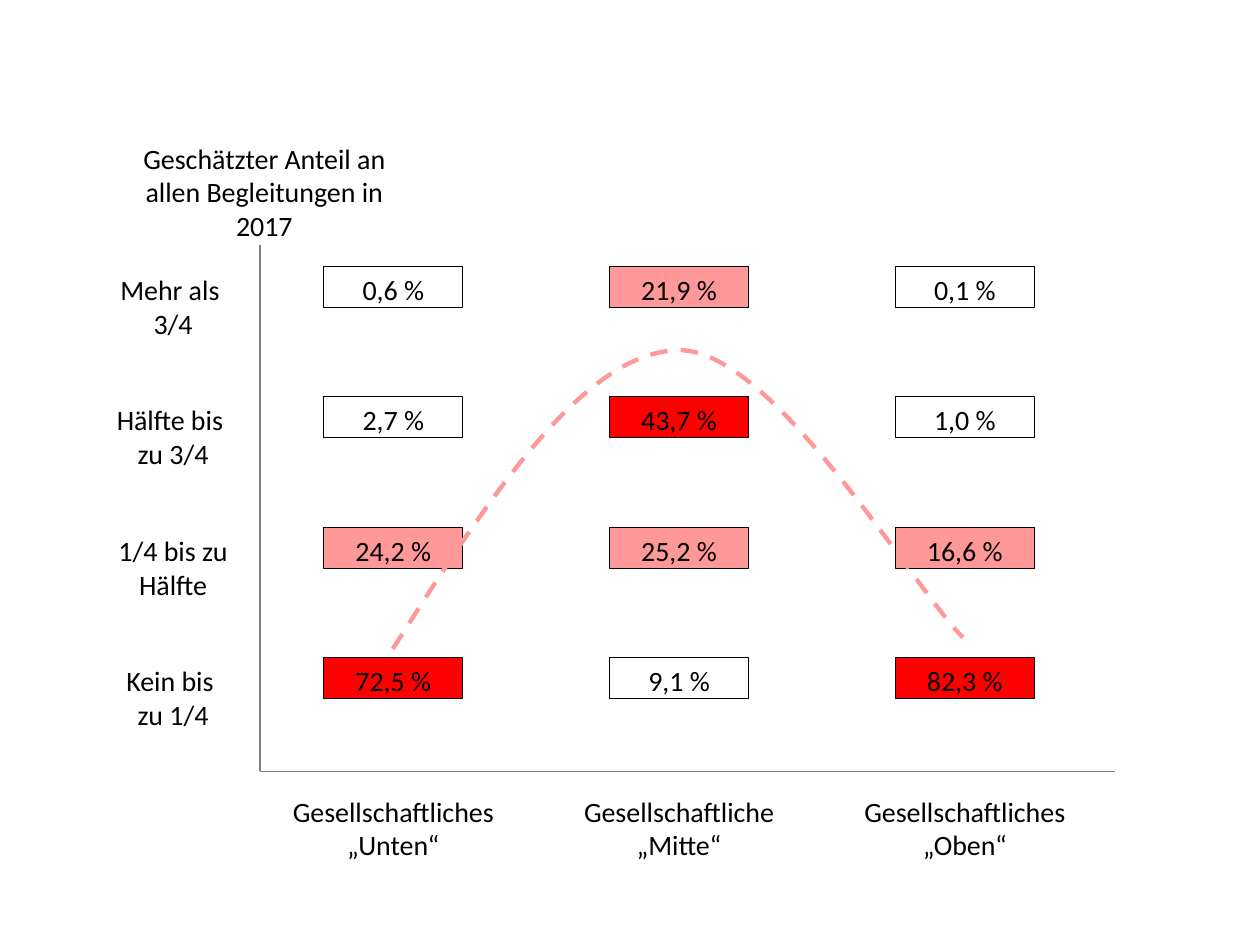
import pptx
import pptx.dml.color
import pptx.enum.dml
import pptx.enum.shapes
import pptx.enum.text
import pptx.oxml.ns
import pptx.util
import lxml.etree

Cm = pptx.util.Cm
Pt = pptx.util.Pt


def color(hex_string):
    return pptx.dml.color.RGBColor.from_string(hex_string)


def write_text(shape, lines):
    """Write centred lines, separated by line breaks, from the top of a shape."""
    frame = shape.text_frame
    frame.word_wrap = True
    frame.vertical_anchor = pptx.enum.text.MSO_ANCHOR.TOP
    paragraph = frame.paragraphs[0]
    paragraph.alignment = pptx.enum.text.PP_ALIGN.CENTER
    for index, line in enumerate(lines):
        if index:
            paragraph.add_line_break()
        run = paragraph.add_run()
        run.text = line
        run.font.name = "Calibri"
        run.font.size = Pt(16)
        run.font.color.rgb = color("000000")


presentation = pptx.Presentation()
presentation.slide_width = Cm(25.4)
presentation.slide_height = Cm(19.05)
slide = presentation.slides.add_slide(presentation.slide_layouts[6])
shapes = slide.shapes

# Grid of value boxes
box_left, box_top = 6.53, 5.37
column_step, row_step = 5.76, 2.63
box_width, box_height = 2.8, 0.83
label_height = 1.42

# Axes
origin_x, origin_y = 5.24, 15.55
for end_x, end_y in [(22.48, origin_y), (origin_x, 4.93)]:
    axis = shapes.add_connector(
        pptx.enum.shapes.MSO_CONNECTOR.STRAIGHT,
        Cm(origin_x), Cm(origin_y), Cm(end_x), Cm(end_y))
    axis.line.color.rgb = color("808080")
    axis.line.width = Pt(0.75)
    lxml.etree.SubElement(
        axis._element.spPr, pptx.oxml.ns.qn("a:effectLst"))

# Axis title
title = shapes.add_textbox(Cm(2.08), Cm(2.72), Cm(6.5), Cm(label_height))
write_text(title, ["Geschätzter Anteil an allen Begleitungen in 2017"])

# Column labels, centred under the boxes
label_width = 4.65
columns = ["Gesellschaftliches „Unten“", "Gesellschaftliche „Mitte“",
           "Gesellschaftliches „Oben“"]
for column, text in enumerate(columns):
    left = box_left + column * column_step - (label_width - box_width) / 2
    label = shapes.add_textbox(
        Cm(left), Cm(15.89), Cm(label_width), Cm(label_height))
    write_text(label, [text])

# Row labels and value boxes, each value with its fill
strong, medium, empty = "FF0000", "FF9999", None
rows = [
    (["Mehr als ", "3/4"],
     [("0,6 %", empty), ("21,9 %", medium), ("0,1 %", empty)]),
    (["Hälfte bis ", "zu 3/4"],
     [("2,7 %", empty), ("43,7 %", strong), ("1,0 %", empty)]),
    (["1/4 bis zu Hälfte"],
     [("24,2 %", medium), ("25,2 %", medium), ("16,6 %", medium)]),
    (["Kein bis ", "zu 1/4"],
     [("72,5 %", strong), ("9,1 %", empty), ("82,3 %", strong)]),
]
for row, (label_lines, values) in enumerate(rows):
    top = box_top + row * row_step
    label = shapes.add_textbox(
        Cm(2.09), Cm(top), Cm(box_width), Cm(label_height))
    write_text(label, label_lines)
    for column, (value, fill) in enumerate(values):
        box = shapes.add_shape(
            pptx.enum.shapes.MSO_SHAPE.RECTANGLE,
            Cm(box_left + column * column_step), Cm(top),
            Cm(box_width), Cm(box_height))
        box.shadow.inherit = False
        if fill:
            box.fill.solid()
            box.fill.fore_color.rgb = color(fill)
        else:
            box.fill.background()
        box.line.color.rgb = color("000000")
        box.line.width = Pt(0.5)
        write_text(box, [value])

# Dashed curve: a start point, then two control points and an end per segment
curve_points = [
    (7.92, 13.08),
    (9.83, 10.08), (11.73, 7.11), (13.67, 7.06),
    (15.57, 7.01), (18.42, 11.86), (19.41, 12.85),
]
points = [(Cm(x), Cm(y)) for x, y in curve_points]
builder = shapes.build_freeform(*points[0])
builder.add_line_segments(points[1:], close=False)
curve = builder.convert_to_shape()
curve.shadow.inherit = False
curve.fill.background()
curve.line.color.rgb = color("FF9999")
curve.line.width = Pt(2.5)
curve.line.dash_style = pptx.enum.dml.MSO_LINE.DASH

# Turn every three line segments into one Bézier segment
outline = curve._element.find(".//" + pptx.oxml.ns.qn("a:path"))
segments = outline.findall(pptx.oxml.ns.qn("a:lnTo"))
for first in range(0, len(segments), 3):
    bezier = lxml.etree.SubElement(outline, pptx.oxml.ns.qn("a:cubicBezTo"))
    for segment in segments[first:first + 3]:
        bezier.append(segment[0])
        outline.remove(segment)

presentation.save("out.pptx")
